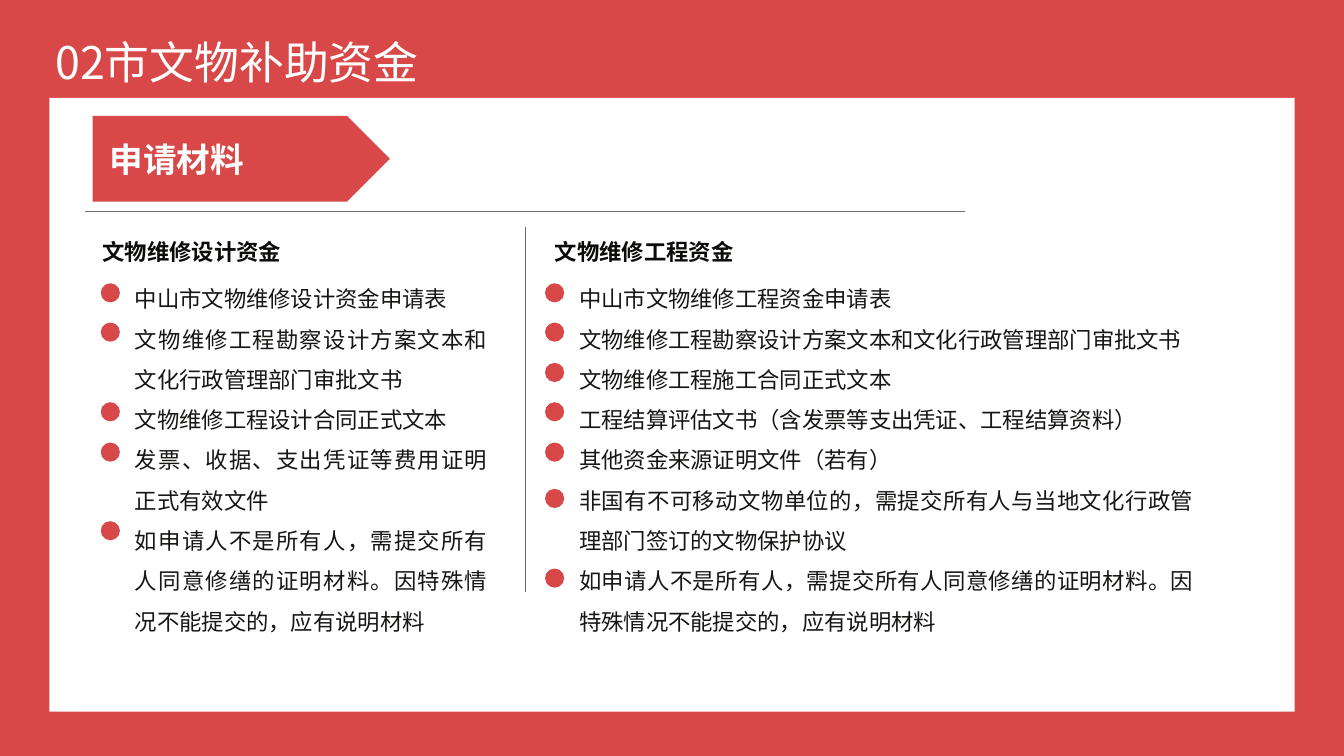
from lxml import etree
from pptx import Presentation
from pptx import util as u
from pptx.dml.color import RGBColor
from pptx.enum import shapes, text
from pptx.oxml.ns import qn

PX = 9144  # 100 px to the inch
FONT = "Noto Sans CJK SC"
HEX = {"red": "D94848", "white": "FFFFFF", "ink": "161615",
       "head": "0B0B0A", "rule": "6E6E6E"}
RGB = {name: RGBColor.from_string(code) for name, code in HEX.items()}
KIND = shapes.MSO_SHAPE
JUST = text.PP_ALIGN.JUSTIFY
LEFT = text.PP_ALIGN.LEFT

prs = Presentation()
prs.slide_width, prs.slide_height = 1334 * PX, 750 * PX
slide = prs.slides.add_slide(prs.slide_layouts[6])
slide.background.fill.solid()
slide.background.fill.fore_color.rgb = RGB["red"]


def draw(kind, box, fill):
    shape = slide.shapes.add_shape(kind, *[n * PX for n in box])
    shape.shadow.inherit = False
    shape.fill.solid()
    shape.fill.fore_color.rgb = RGB[fill]
    shape.line.fill.background()
    return shape


def write(shape, lines, size, color, bold=False, align=LEFT, space=1.0):
    """Fill a shape with one paragraph per line."""
    frame = shape.text_frame
    frame.word_wrap = True
    for i, line in enumerate(lines):
        para = frame.add_paragraph() if i else frame.paragraphs[0]
        para.alignment, para.line_spacing = align, space
        run = para.add_run()
        run.text = line
        font = run.font
        font.name, font.size, font.bold = FONT, u.Pt(size), bold
        font.color.rgb = RGB[color]
        east = etree.SubElement(run._r.get_or_add_rPr(), qn("a:ea"))
        east.set("typeface", FONT)


draw(KIND.RECTANGLE, (49, 97, 1236, 609), "white")
title = slide.shapes.add_textbox(45 * PX, 29 * PX, 496 * PX, 68 * PX)
write(title, ["02市文物补助资金"], 32, "white", align=JUST)

banner = draw(KIND.PENTAGON, (92, 115, 295, 85), "red")
banner.text_frame.margin_left = 17 * PX
banner.text_frame.vertical_anchor = text.MSO_ANCHOR.MIDDLE
write(banner, ["申请材料"], 24, "white", bold=True)

for ends in [(522, 225, 522, 587), (84, 210, 958, 210)]:
    rule = slide.shapes.add_connector(
        shapes.MSO_CONNECTOR.STRAIGHT, *[n * PX for n in ends])
    rule.line.color.rgb = RGB["rule"]
    rule.line.width = u.Pt(0.75)
    etree.SubElement(rule._element.spPr, qn("a:effectLst"))

# heading, heading left, dot left, list left, list width, dot rows, items
columns = [
    ("文物维修设计资金", 92, 100, 124, 370, [0, 1, 3, 4, 6], [
        "中山市文物维修设计资金申请表",
        "文物维修工程勘察设计方案文本和文化行政管理部门审批文书",
        "文物维修工程设计合同正式文本",
        "发票、收据、支出凭证等费用证明正式有效文件",
        "如申请人不是所有人，需提交所有人同意修缮的证明材料。"
        "因特殊情况不能提交的，应有说明材料",
    ]),
    ("文物维修工程资金", 541, 541, 565, 630, [0, 1, 2, 3, 4, 5.18, 7.18], [
        "中山市文物维修工程资金申请表",
        "文物维修工程勘察设计方案文本和文化行政管理部门审批文书",
        "文物维修工程施工合同正式文本",
        "工程结算评估文书（含发票等支出凭证、工程结算资料）",
        "其他资金来源证明文件（若有）",
        "非国有不可移动文物单位的，需提交所有人与当地文化行政管理部门"
        "签订的文物保护协议",
        "如申请人不是所有人，需提交所有人同意修缮的证明材料。"
        "因特殊情况不能提交的，应有说明材料",
    ]),
]
for head, left, dot, start, width, rows, items in columns:
    label = slide.shapes.add_textbox(left * PX, 218 * PX, 364 * PX, 46 * PX)
    write(label, [head], 16, "head", bold=True, space=1.5)
    body = slide.shapes.add_textbox(start * PX, 265 * PX, width * PX, 374 * PX)
    write(body, items, 16, "ink", align=JUST, space=1.5)
    for row in rows:
        draw(KIND.OVAL, (dot, round(281 + 39.4 * row), 19, 19), "red")

prs.save("out.pptx")
